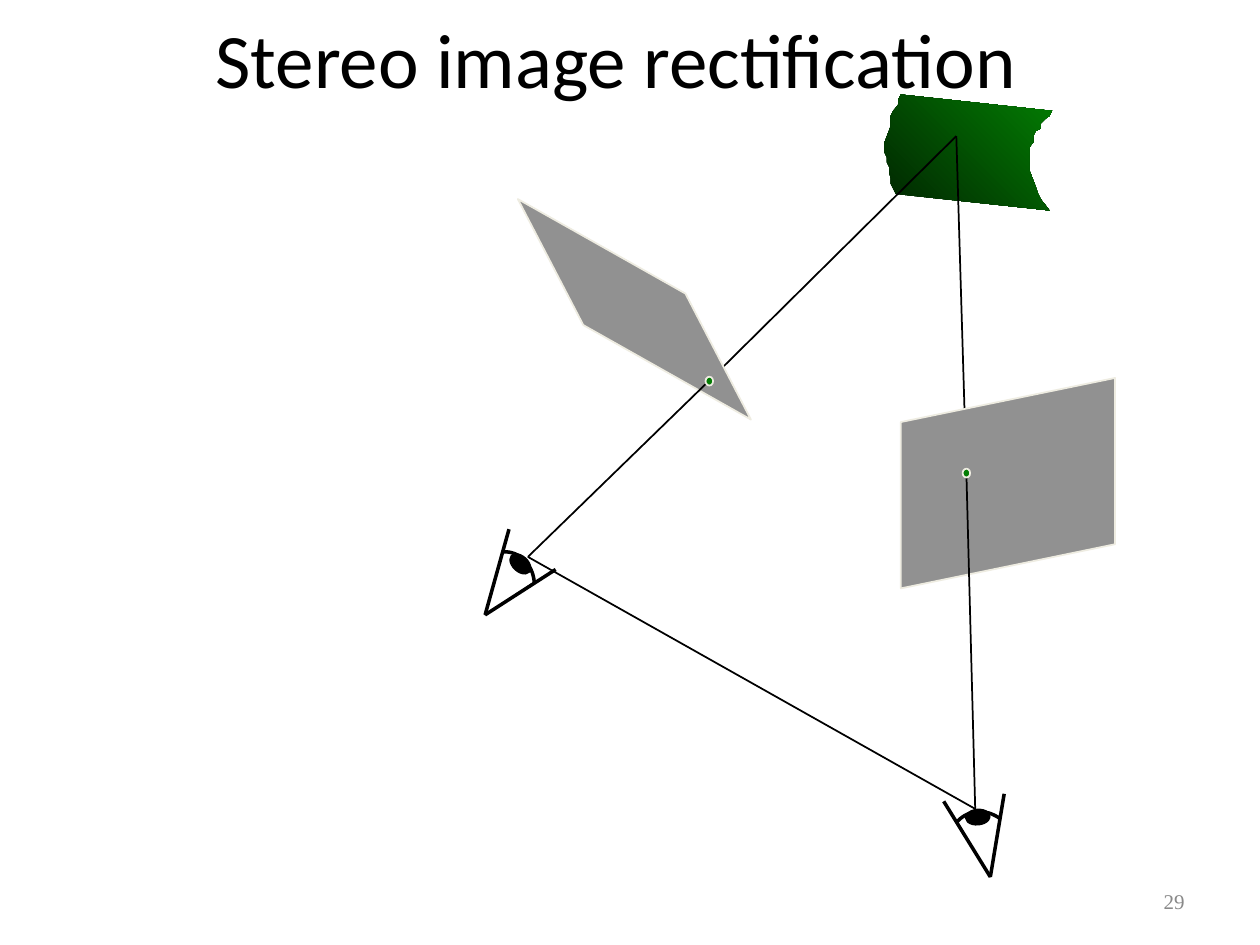
"""Builds the stereo image rectification slide."""
from lxml import etree
from pptx import Presentation
from pptx.dml.color import RGBColor
from pptx.enum.shapes import MSO_CONNECTOR as Connector, MSO_SHAPE as Shape
from pptx.enum.text import MSO_ANCHOR as Anchor, PP_ALIGN as Align
from pptx.oxml.ns import qn
from pptx.util import Inches, Pt

BLACK = RGBColor(0x00, 0x00, 0x00)
GREEN = RGBColor(0x03, 0x7C, 0x03)
DARK_GREEN = RGBColor(0x01, 0x25, 0x01)
GRAY = RGBColor(0x91, 0x91, 0x91)
CREAM = RGBColor(0xEE, 0xEC, 0xE1)
NUMBER_GRAY = RGBColor(0x89, 0x89, 0x89)

LEFT_CENTER, RIGHT_CENTER = (4.19, 4.42), (7.74, 6.42)
LEFT_PIXEL, RIGHT_PIXEL = (5.63, 3.02), (7.67, 3.75)
SCENE_POINT = (7.59, 1.08)
SURFACE = [
    (7.15, 0.75), (7.13, 0.79), (7.13, 0.83), (7.09, 0.88), (7.07, 0.92),
    (7.07, 1), (7.02, 1.13), (7.02, 1.21), (7.04, 1.25), (7.04, 1.29),
    (7.06, 1.33), (7.06, 1.38), (7.07, 1.42), (7.07, 1.46), (7.11, 1.54),
    (8.33, 1.67), (8.26, 1.58), (8.24, 1.54), (8.22, 1.48), (8.17, 1.35),
    (8.17, 1.17), (8.2, 1.13), (8.2, 1.08), (8.22, 1.04), (8.26, 1.02),
    (8.26, 0.98), (8.3, 0.94), (8.33, 0.92), (8.35, 0.88),
]
LEFT_PLANE = [(4.63, 2.58), (5.96, 3.33), (5.44, 2.33), (4.11, 1.58)]
RIGHT_PLANE = [(7.15, 3.35), (7.15, 4.67), (8.85, 4.32), (8.85, 3)]


def curve_points(start, control_1, control_2, end, steps=16):
    weights = []
    for step in range(steps + 1):
        t = step / steps
        weights.append(((1 - t) ** 3, 3 * t * (1 - t) ** 2, 3 * t * t * (1 - t), t ** 3))
    corners = (start, control_1, control_2, end)
    return [tuple(sum(w * corner[axis] for w, corner in zip(row, corners))
                  for axis in (0, 1)) for row in weights]


class Sketch:
    def __init__(self, slide):
        self.shapes = slide.shapes

    def style(self, shape, fill, line, width):
        shape.shadow.inherit = False
        if fill is None:
            shape.fill.background()
        else:
            shape.fill.solid()
            shape.fill.fore_color.rgb = fill
        if line is None:
            shape.line.fill.background()
        else:
            shape.line.color.rgb = line
            shape.line.width = Pt(width)

    def line(self, start, end, width=1):
        ends = [Inches(value) for value in (*start, *end)]
        connector = self.shapes.add_connector(Connector.STRAIGHT, *ends)
        connector.line.color.rgb = BLACK
        connector.line.width = Pt(width)
        etree.SubElement(connector._element.spPr, qn("a:effectLst"))

    def outline(self, points, fill=None, line=None, width=1, close=True):
        corners = [(Inches(x), Inches(y)) for x, y in points]
        builder = self.shapes.build_freeform(*corners[0])
        builder.add_line_segments(corners[1:], close=close)
        shape = builder.convert_to_shape()
        self.style(shape, fill, line, width)
        return shape

    def surface(self, points):
        shape = self.outline(points)
        shape.fill.gradient()
        shape.fill.gradient_angle = 45
        for stop, color in zip(shape.fill.gradient_stops, (DARK_GREEN, GREEN)):
            stop.color.rgb = color

    def ellipse(self, left, top, width, height, fill, line, rotation=0):
        box = [Inches(value) for value in (left, top, width, height)]
        shape = self.shapes.add_shape(Shape.OVAL, *box)
        shape.rotation = rotation
        self.style(shape, fill, line, 1)

    def eye(self, apex, lids, arc, pupil, rotation):
        points = curve_points(*arc)
        self.outline([apex] + points, line=BLACK, width=0.75)
        self.outline(points, line=BLACK, width=2, close=False)
        self.line(lids[0], apex, 2)
        self.ellipse(*pupil, 0.12, 0.19, BLACK, BLACK, rotation)
        self.line(apex, lids[1], 2)

    def text(self, box, words, align, font):
        frame = self.shapes.add_textbox(*[Inches(value) for value in box]).text_frame
        frame.word_wrap = True
        frame.vertical_anchor = Anchor.MIDDLE
        paragraph = frame.paragraphs[0]
        paragraph.alignment = align
        run = paragraph.add_run()
        run.text = words
        color = font["color"]
        run.font.color.rgb = color
        for name, value in font["format"].items():
            setattr(run.font, name, value)


presentation = Presentation()
presentation.slide_width, presentation.slide_height = Inches(10), Inches(7.5)
sketch = Sketch(presentation.slides.add_slide(presentation.slide_layouts[6]))

sketch.surface(SURFACE)
sketch.line(LEFT_CENTER, RIGHT_CENTER)
sketch.line(LEFT_PIXEL, SCENE_POINT)
sketch.outline(LEFT_PLANE, GRAY, CREAM)
sketch.line(RIGHT_PIXEL, SCENE_POINT)
sketch.line(LEFT_CENTER, LEFT_PIXEL)
sketch.outline(RIGHT_PLANE, GRAY, CREAM)
sketch.line(RIGHT_CENTER, RIGHT_PIXEL)

sketch.eye((7.86, 6.96), [(7.49, 6.36), (7.97, 6.3)],
           [(7.59, 6.53), (7.67, 6.43), (7.82, 6.41), (7.94, 6.5)], (7.7, 6.39), 264.6)
sketch.eye((3.85, 4.88), [(4.04, 4.2), (4.41, 4.52)],
           [(3.99, 4.38), (4.12, 4.37), (4.23, 4.48), (4.24, 4.62)], (4.07, 4.38), 312.5)

sketch.text((0.39, -0.17, 9, 1.25), "Stereo image rectification", Align.CENTER,
            {"color": BLACK, "format": {"name": "Calibri", "size": Pt(44)}})
for left, top in [(7.64, 3.72), (5.6, 2.99)]:
    sketch.ellipse(left, top, 0.06, 0.07, GREEN, CREAM)
sketch.text((7.17, 6.95, 2.33, 0.4), "29", Align.RIGHT,
            {"color": NUMBER_GRAY, "format": {"name": "Times New Roman", "size": Pt(12)}})

presentation.save("out.pptx")
